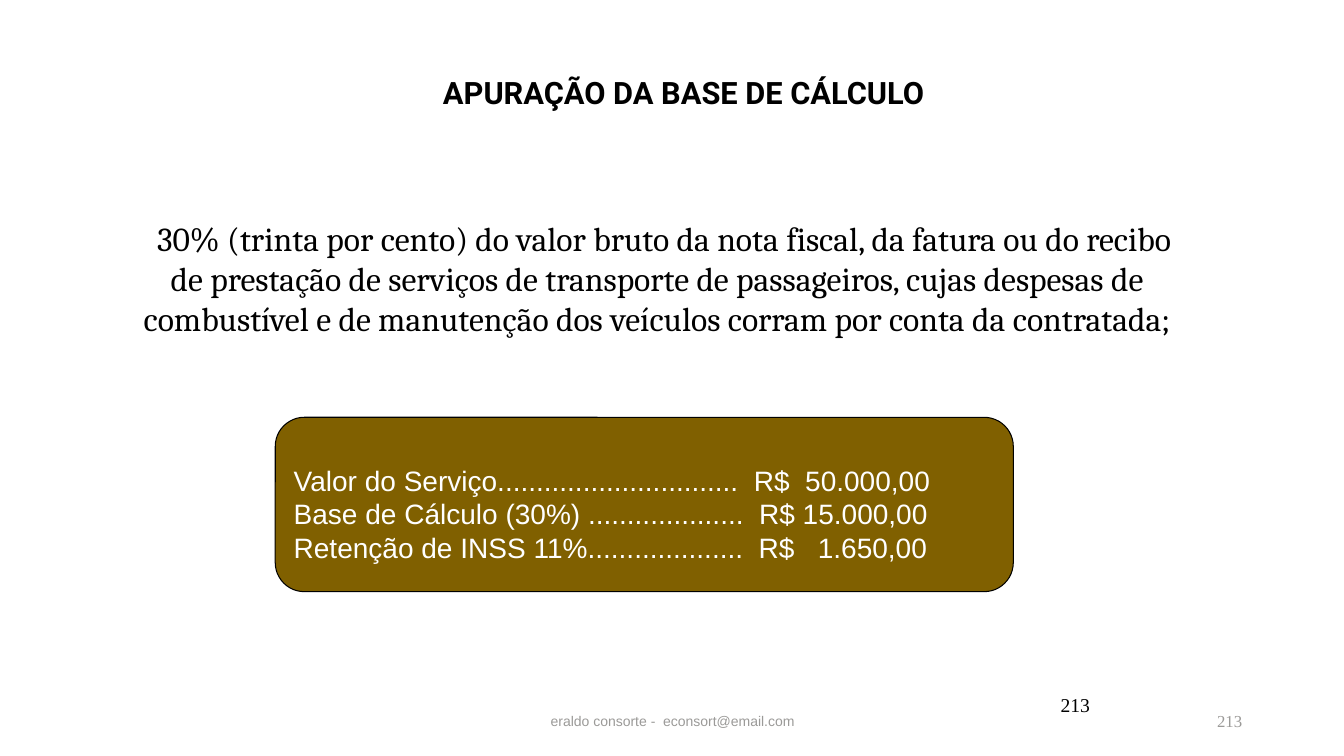
from pptx import Presentation
from pptx.dml.color import RGBColor
from pptx.enum import shapes, text
from pptx.util import Inches, Pt

LEFT, CENTER, RIGHT = text.PP_ALIGN.LEFT, text.PP_ALIGN.CENTER, text.PP_ALIGN.RIGHT
TOP, MIDDLE = text.MSO_ANCHOR.TOP, text.MSO_ANCHOR.MIDDLE
BLACK, WHITE, GREY, BROWN = "000000", "FFFFFF", "9B9A98", "806000"

RULE = (
    "30% (trinta por cento) do valor bruto da nota fiscal, da fatura ou do recibo "
    "de prestação de serviços de transporte de passageiros, cujas despesas de "
    "combustível e de manutenção dos veículos corram por conta da contratada;"
)
CALCULATION = [
    "Valor do Serviço...............................  R$  50.000,00",
    "Base de Cálculo (30%) ....................  R$ 15.000,00",
    "Retenção de INSS 11%....................  R$   1.650,00",
]
PAGE = "213"

# box, lines, font, size, colour, alignment, anchor, bold
LABELS = [
    ((4.42, 6.95, 4.5, 0.4), ["eraldo consorte -  econsort@email.com"],
     "Arial", 10, GREY, CENTER, MIDDLE, False),
    ((9.42, 6.95, 3, 0.4), [PAGE], "Times New Roman", 12, GREY, RIGHT, MIDDLE, False),
    ((8.83, 6.83, 2.08, 0.5), [PAGE], "Times New Roman", 14, BLACK, RIGHT, TOP, False),
    ((1.82, 0.68, 9.92, 0.47), ["APURAÇÃO DA BASE DE CÁLCULO"],
     "Roboto", 22, BLACK, CENTER, TOP, True),
]


def rgb(value):
    return RGBColor.from_string(value)


def write(shape, lines, font, size, colour, alignment, anchor, bold=False):
    frame = shape.text_frame
    frame.word_wrap = True
    frame.vertical_anchor = anchor
    frame.text = "\n".join(lines)
    for paragraph in frame.paragraphs:
        paragraph.alignment = alignment
        paragraph.font.name = font
        paragraph.font.size = Pt(size)
        paragraph.font.bold = bold
        paragraph.font.color.rgb = rgb(colour)


def add_panel(slide, kind, box, line, fill=None):
    panel = slide.shapes.add_shape(kind, *map(Inches, box))
    panel.shadow.inherit = False
    panel.line.color.rgb = rgb(line)
    panel.line.width = Pt(0.75)
    if fill:
        panel.fill.solid()
        panel.fill.fore_color.rgb = rgb(fill)
    else:
        panel.fill.background()
    return panel


def main():
    presentation = Presentation()
    presentation.slide_width, presentation.slide_height = Inches(13.33), Inches(7.5)
    slide = presentation.slides.add_slide(presentation.slide_layouts[6])

    for box, *style in LABELS:
        write(slide.shapes.add_textbox(*map(Inches, box)), *style)

    rule = add_panel(slide, shapes.MSO_SHAPE.RECTANGLE, (1.29, 2.11, 10.45, 1.72), WHITE)
    write(rule, [RULE], "Cambria", 24, BLACK, CENTER, TOP)
    # First-line indent
    properties = rule.text_frame.paragraphs[0]._p.get_or_add_pPr()
    properties.set("indent", str(Inches(0.14)))

    calculation = add_panel(slide, shapes.MSO_SHAPE.ROUNDED_RECTANGLE,
                            (2.73, 4.14, 7.32, 1.73), BLACK, BROWN)
    calculation.adjustments[0] = 0.167
    write(calculation, CALCULATION, "Arial", 20, WHITE, LEFT, TOP)
    calculation.text_frame.margin_top = Inches(0.37)

    presentation.save("out.pptx")


if __name__ == "__main__":
    main()
